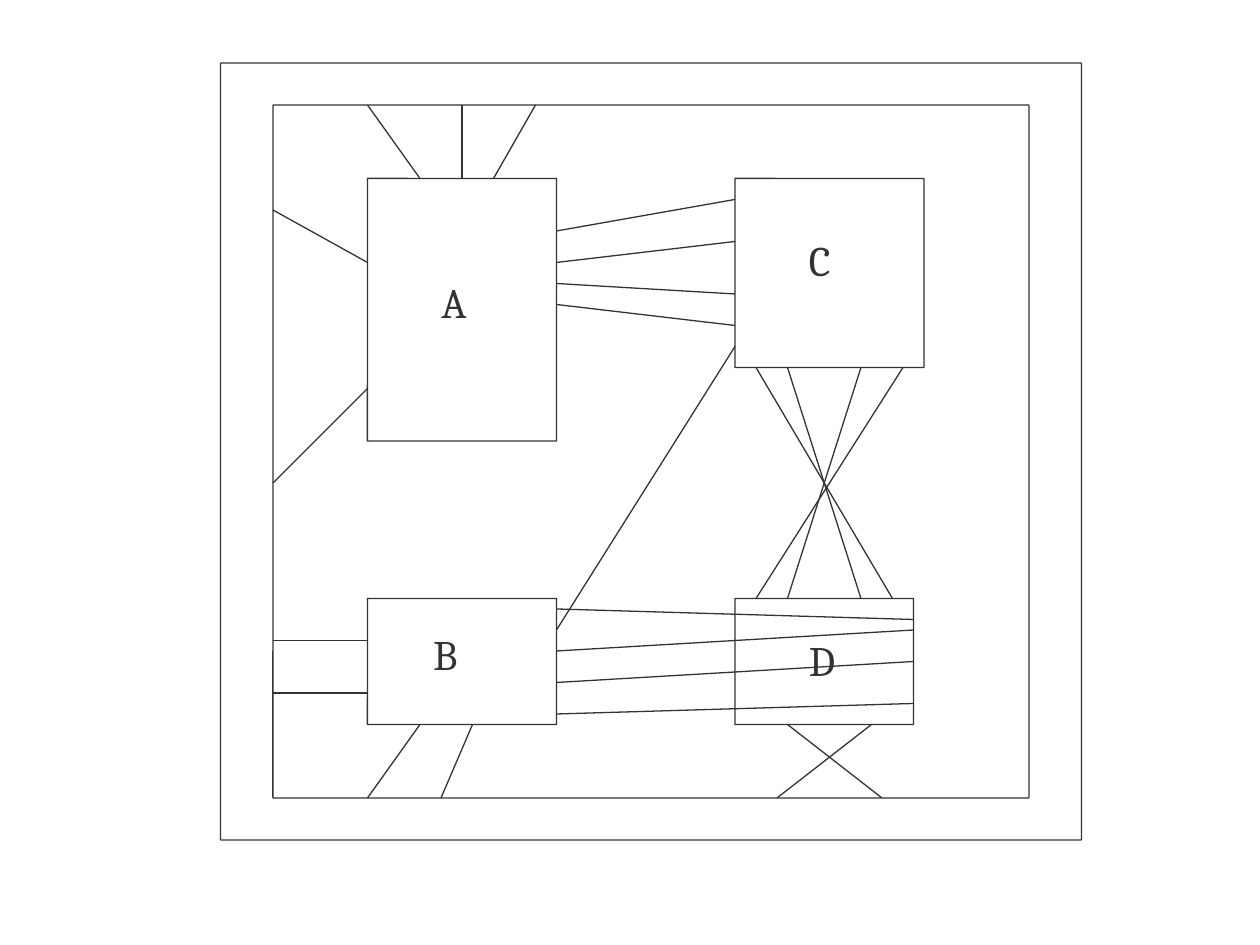
from typing import NamedTuple

from lxml.etree import SubElement
from pptx import Presentation
from pptx.dml.color import RGBColor
from pptx.enum.shapes import MSO_CONNECTOR as Connector, MSO_SHAPE as Preset
from pptx.oxml.ns import qn
from pptx.util import Inches, Pt

# The drawing sits on a grid of twelve cells to the inch
COLUMNS, ROWS = 120, 90
INK = "333333"
FONT = "Cambria"


class Room(NamedTuple):
    left: int
    top: int
    width: int
    height: int


class Label(NamedTuple):
    text: str
    left: float
    top: float
    width: float = 5.2
    height: float = 6


class Bundle(NamedTuple):
    """Lines between two parallel walls, given as pairs of places along them."""
    start_wall: int
    end_wall: int
    pairs: list[tuple[int, int]]
    upright: bool = False


ROOMS = [
    Room(35, 17, 18, 25),   # A
    Room(70, 17, 18, 18),   # C
    Room(35, 57, 18, 12),   # B
    Room(70, 57, 17, 12),   # D
    Room(26, 10, 72, 66),   # inner frame
    Room(21, 6, 82, 74),    # outer frame
]

BUNDLES = [
    Bundle(17, 10, [(47, 51), (44, 44), (40, 35)], True),              # A to top
    Bundle(35, 26, [(25, 20), (37, 46), (61, 61), (66, 66)]),          # A, B to left
    Bundle(69, 76, [(40, 35), (45, 42), (83, 74), (75, 84)], True),    # B, D to bottom
    Bundle(35, 57, [(86, 72), (72, 85), (75, 82), (82, 75)], True),    # C to D
    Bundle(53, 87, [(58, 59), (62, 60), (65, 63), (68, 67)]),          # B to D
    Bundle(53, 70, [(60, 33), (22, 19), (25, 23), (27, 28), (29, 31)]),  # A, B to C
]

LABELS = [
    Label("A", 41.8, 26.5),
    Label("B", 41, 60),
    Label("C", 76.8, 22.5),
    Label("D", 76.8, 60.6),
]

deck = Presentation()
deck.slide_width, deck.slide_height = Inches(10), Inches(7.5)
page = deck.slides.add_slide(deck.slide_layouts[6])


def color(value: str) -> RGBColor:
    return RGBColor.from_string(value)


def across(columns: float) -> int:
    return round(deck.slide_width * columns / COLUMNS)


def down(rows: float) -> int:
    return round(deck.slide_height * rows / ROWS)


def place(item: Room | Label) -> tuple[int, int, int, int]:
    return across(item.left), down(item.top), across(item.width), down(item.height)


def ink(line) -> None:
    line.color.rgb = color(INK)
    line.width = Pt(0.75)


def draw_room(room: Room) -> None:
    box = page.shapes.add_shape(Preset.ROUNDED_RECTANGLE, *place(room))
    box.adjustments[0] = 0.001
    box.shadow.inherit = False
    box.fill.background()
    ink(box.line)


def draw_bundle(bundle: Bundle) -> None:
    for start, end in bundle.pairs:
        ends = [(bundle.start_wall, start), (bundle.end_wall, end)]
        if bundle.upright:
            ends = [(x, y) for y, x in ends]
        (x1, y1), (x2, y2) = ends
        line = page.shapes.add_connector(
            Connector.STRAIGHT, across(x1), down(y1), across(x2), down(y2))
        ink(line.line)
        SubElement(line.element.spPr, qn("a:effectLst"))


def draw_label(label: Label) -> None:
    frame = page.shapes.add_textbox(*place(label)).text_frame
    frame.word_wrap = True
    frame.margin_left = frame.margin_right = Inches(0.02)
    frame.margin_top = frame.margin_bottom = Inches(0.05)
    frame.text = label.text
    para = frame.paragraphs[0]
    para.line_spacing = 0.85
    span = para.runs[0]
    span.font.name = FONT
    span.font.size = Pt(24)
    span.font.color.rgb = color(INK)


# Rooms and frames, then the lines, then the letters on top
for room in ROOMS:
    draw_room(room)
for bundle in BUNDLES:
    draw_bundle(bundle)
for label in LABELS:
    draw_label(label)

deck.save("out.pptx")
